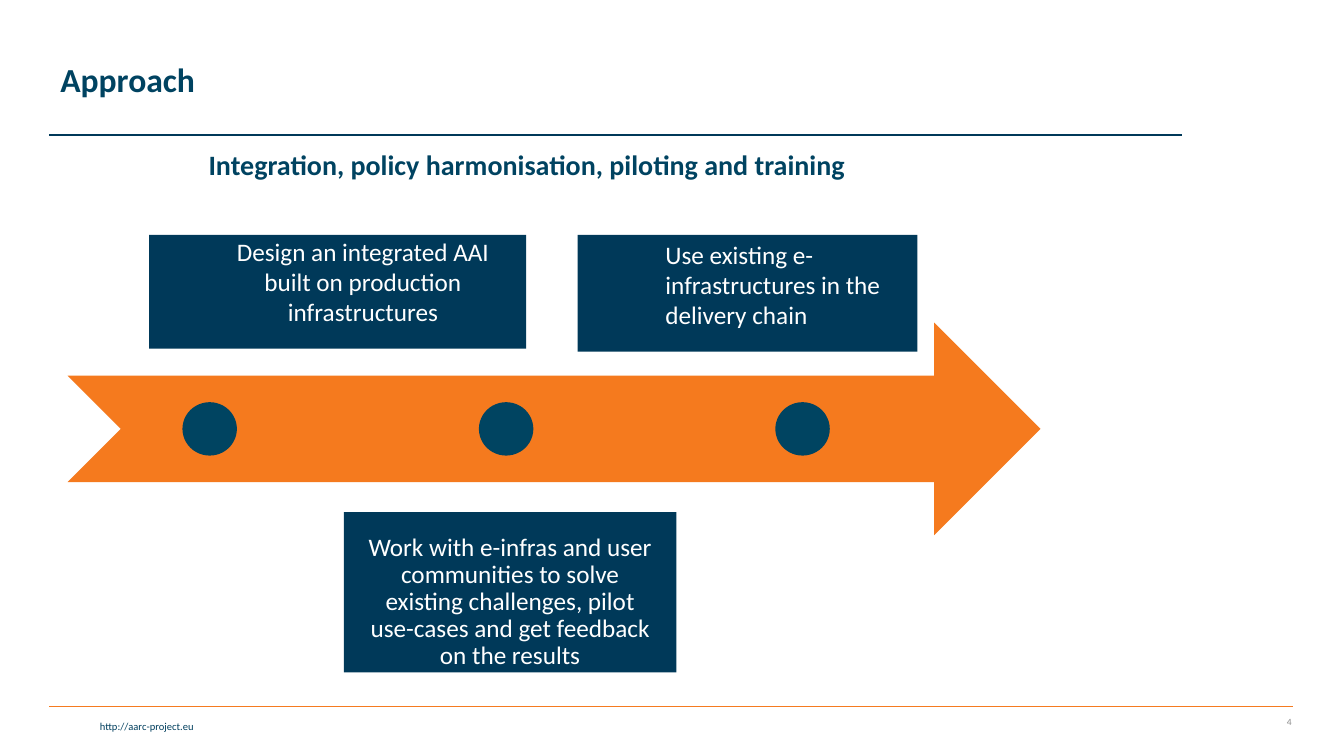
from lxml.etree import SubElement
from pptx import Presentation
from pptx.dml.color import RGBColor
from pptx.enum.shapes import MSO_CONNECTOR, MSO_SHAPE
from pptx.enum.text import MSO_ANCHOR, PP_ALIGN
from pptx.oxml.ns import qn
from pptx.util import Inches, Pt

TITLE_BLUE = RGBColor(0x00, 0x43, 0x61)
DOT_BLUE = RGBColor(0x00, 0x44, 0x61)
BOX_BLUE = RGBColor(0x00, 0x39, 0x59)
FOOTER_BLUE = RGBColor(0x00, 0x3F, 0x5E)
ARROW_ORANGE = RGBColor(0xF5, 0x7A, 0x1E)
RULE_ORANGE = RGBColor(0xF5, 0x7B, 0x20)
GREY = RGBColor(0x8C, 0x8C, 0x8C)
WHITE = RGBColor(0xFF, 0xFF, 0xFF)


def write_text(shape, text, size, color, bold=False, align=PP_ALIGN.LEFT,
               anchor=MSO_ANCHOR.TOP, spacing=1.0, inset=None, indent=0):
    frame = shape.text_frame
    frame.word_wrap = True
    frame.vertical_anchor = anchor
    if inset is not None:
        frame.margin_left = frame.margin_right = Inches(inset)
        frame.margin_top = frame.margin_bottom = Inches(inset)
    paragraph = frame.paragraphs[0]
    paragraph.text = text
    paragraph.alignment = align
    paragraph.line_spacing = spacing
    if indent:
        properties = paragraph._p.get_or_add_pPr()
        properties.set("marL", str(Inches(indent)))
        properties.set("indent", "0")
    font = paragraph.runs[0].font
    font.name = "Calibri"
    font.size = Pt(size)
    font.bold = bold
    font.color.rgb = color


def add_text(slide, box, text, **style):
    write_text(slide.shapes.add_textbox(*map(Inches, box)), text, **style)


def add_filled(slide, kind, box, color):
    shape = slide.shapes.add_shape(kind, *map(Inches, box))
    shape.shadow.inherit = False
    shape.fill.solid()
    shape.fill.fore_color.rgb = color
    shape.line.fill.background()
    return shape


def add_rule(slide, left, right, top, color):
    rule = slide.shapes.add_connector(
        MSO_CONNECTOR.STRAIGHT, Inches(left), Inches(top), Inches(right), Inches(top))
    rule.line.color.rgb = color
    rule.line.width = Pt(1)
    SubElement(rule._element.spPr, qn("a:effectLst"))


def add_header(slide, left, top, width):
    add_rule(slide, left, left + 11.23, top + 1.26, BOX_BLUE)
    add_text(slide, (left + 1.48, top + 1.37, 6.97, 0.56),
             "Integration, policy harmonisation, piloting and training",
             size=20, color=TITLE_BLUE, bold=True, spacing=0.9)
    add_text(slide, (left + 0.01, top, width, 1.45), "Approach", size=24,
             color=TITLE_BLUE, bold=True, anchor=MSO_ANCHOR.MIDDLE, spacing=0.9)


def add_footer(slide, left, top, width):
    add_rule(slide, left, left + width, top, RULE_ORANGE)
    add_text(slide, (left - 0.46, top + 0.08, 1.99, 0.23), "http://aarc-project.eu",
             size=7.5, color=FOOTER_BLUE, align=PP_ALIGN.RIGHT)
    add_text(slide, (left + width - 0.72, top, 0.81, 0.3), "4", size=6.8, color=GREY,
             align=PP_ALIGN.RIGHT, anchor=MSO_ANCHOR.MIDDLE)


def add_step(slide, box, text, **style):
    step = add_filled(slide, MSO_SHAPE.RECTANGLE, box, BOX_BLUE)
    write_text(step, text, size=18, color=WHITE, inset=0.22, **style)


def add_timeline(slide, left, top, width, height):
    # Steps above and below the arrow
    add_step(slide, (left + 5.06, top - 0.87, 3.37, 1.16),
             "Use existing e-infrastructures in the delivery chain",
             anchor=MSO_ANCHOR.BOTTOM, indent=0.65)
    add_step(slide, (left + 2.74, top + 1.88, 3.3, 1.59),
             "Work with e-infras and user communities to solve existing challenges, "
             "pilot use-cases and get feedback on the results",
             align=PP_ALIGN.CENTER, spacing=0.9)
    add_step(slide, (left + 0.81, top - 0.87, 3.74, 1.13),
             "Design an integrated AAI built on production infrastructures",
             align=PP_ALIGN.CENTER, anchor=MSO_ANCHOR.BOTTOM, indent=0.5)

    # Arrow with evenly spaced dots
    add_filled(slide, MSO_SHAPE.NOTCHED_RIGHT_ARROW, (left, top, width, height),
               ARROW_ORANGE)
    dot_width, dot_height, dot_pitch = 0.54, 0.53, 2.94
    for index in range(3):
        add_filled(slide, MSO_SHAPE.OVAL,
                   (left + 1.14 + index * dot_pitch, top + (height - dot_height) / 2,
                    dot_width, dot_height), DOT_BLUE)


def main():
    presentation = Presentation()
    presentation.slide_width = Inches(13.33)
    presentation.slide_height = Inches(7.5)
    slide = presentation.slides.add_slide(presentation.slide_layouts[6])
    add_footer(slide, 0.49, 7.01, 12.33)
    add_header(slide, 0.49, 0.08, 10.51)
    add_timeline(slide, 0.67, 3.2, 9.65, 2.11)
    presentation.save("out.pptx")


if __name__ == "__main__":
    main()
